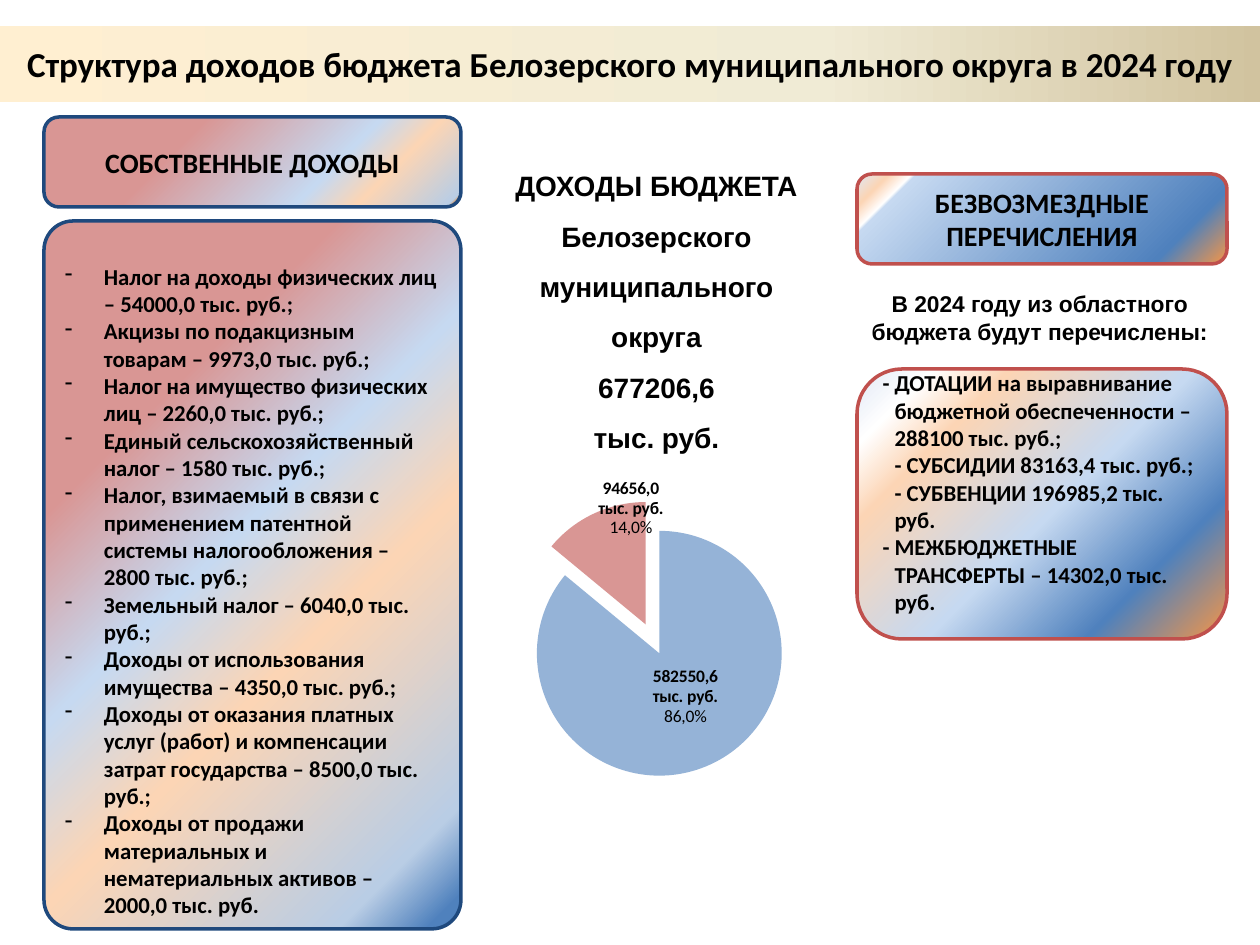
"""Builds a one-slide overview of a municipal district's 2024 budget revenue."""
from lxml.etree import SubElement
from pptx import Presentation
from pptx.chart.data import CategoryChartData
from pptx.dml.color import RGBColor
from pptx.enum.chart import XL_CHART_TYPE, XL_LABEL_POSITION
from pptx.enum.shapes import MSO_SHAPE
from pptx.enum.text import MSO_ANCHOR, PP_ALIGN
from pptx.oxml.ns import qn
from pptx.util import Pt

EMU_PER_PX = 914400 // 126
COLORS = {
    "text": "000000", "cream": "FFEFD1", "ivory": "F0EBD5", "sand": "D1C39F",
    "orange": "F79646", "blue": "4F81BD", "sky": "C6D9F1", "mist": "B9CDE5",
    "peach": "FCD5B5", "white": "FFFFFF", "ice": "E1E8F5", "rose": "D99694",
    "red": "C0504D", "navy": "1F497D", "steel": "95B3D7",
}

TITLE = "Структура доходов бюджета Белозерского муниципального округа в 2024 году"
OWN_HEADING = "СОБСТВЕННЫЕ ДОХОДЫ"
OWN_REVENUES = [
    "Налог на доходы физических лиц – 54000,0 тыс. руб.;",
    "Акцизы по подакцизным товарам – 9973,0 тыс. руб.;",
    "Налог на имущество физических лиц – 2260,0 тыс. руб.;",
    "Единый сельскохозяйственный налог – 1580 тыс. руб.;",
    "Налог, взимаемый в связи с применением патентной системы налогообложения – 2800 тыс. руб.;",
    "Земельный налог – 6040,0 тыс. руб.;",
    "Доходы от использования имущества – 4350,0 тыс. руб.;",
    "Доходы от оказания платных услуг (работ) и компенсации затрат государства – 8500,0 тыс. руб.;",
    "Доходы от продажи материальных и нематериальных активов – 2000,0 тыс. руб.",
]
TOTAL = ["ДОХОДЫ БЮДЖЕТА Белозерского муниципального округа", "677206,6", "тыс. руб."]
GRANTS_HEADING = "БЕЗВОЗМЕЗДНЫЕ ПЕРЕЧИСЛЕНИЯ"
GRANTS_INTRO = "В 2024 году из областного бюджета будут перечислены:"
GRANTS = [
    ("- ДОТАЦИИ на выравнивание бюджетной обеспеченности – 288100 тыс. руб.;", -12),
    ("- СУБСИДИИ 83163,4 тыс. руб.;", 0),
    ("- СУБВЕНЦИИ 196985,2 тыс. руб.", 0),
    ("- МЕЖБЮДЖЕТНЫЕ ТРАНСФЕРТЫ – 14302,0 тыс. руб.", -12),
]
SHARES = [
    {"value": 86, "color": "steel", "amount": "582550,6", "percent": "86,0%", "shift": (0, -0.03)},
    {"value": 14, "color": "rose", "amount": "94656,0", "percent": "14,0%", "shift": (0.02, -0.15)},
]

GRADIENTS = {
    "title": [(0, "cream"), (65, "ivory"), (100, "sand")],
    "own_heading": [(1, "blue"), (2, "orange"), (3, "mist"), (21, "peach"), (33, "sky"), (68, "rose")],
    "own_list": [(0, "blue"), (3, "blue"), (11, "mist"), (39, "peach"), (55, "sky"), (74, "rose")],
    "grants_heading": [(0, "orange"), (16, "blue"), (87, "sky"), (88, "white"), (93, "peach"), (100, "ice")],
    "grants_list": [(0, "orange"), (22, "blue"), (47, "sky"), (76, "peach"), (88, "white"), (100, "ice")],
}
OWN_X, OWN_W = 44, 417
GRANTS_X, GRANTS_W = 857, 370
HEADING_H = 90


def px(length):
    return int(length * EMU_PER_PX)


def rgb(name):
    return RGBColor.from_string(COLORS[name])


def style(font, size, face="Calibri", bold=True):
    font.size, font.name, font.bold = Pt(size), face, bold
    font.color.rgb = rgb("text")


def write(frame, lines, size, face="Calibri", align=PP_ALIGN.CENTER, spacing=None):
    frame.word_wrap = True
    for number, line in enumerate(lines):
        paragraph = frame.add_paragraph() if number else frame.paragraphs[0]
        paragraph.alignment = align
        if spacing:
            paragraph.line_spacing = spacing
        run = paragraph.add_run()
        run.text = line
        style(run.font, size, face)
    return frame


def indent(paragraph, margin, first, bullet=None):
    properties = paragraph._p.get_or_add_pPr()
    properties.set("marL", str(px(margin)))
    properties.set("indent", str(px(first)))
    if bullet:
        SubElement(properties, qn("a:buChar")).set("char", bullet)


def add_panel(slide, box, gradient, angle=135, border=None, kind=MSO_SHAPE.ROUNDED_RECTANGLE):
    panel = slide.shapes.add_shape(kind, *map(px, box))
    panel.shadow.inherit = False
    panel.fill.gradient()
    panel.fill.gradient_angle = angle
    stops = panel._element.spPr.find(qn("a:gradFill")).find(qn("a:gsLst"))
    for stop in list(stops):
        stops.remove(stop)
    for position, color in GRADIENTS[gradient]:
        stop = SubElement(stops, qn("a:gs"), pos=str(position * 1000))
        SubElement(stop, qn("a:srgbClr"), val=COLORS[color])
    if border:
        panel.line.color.rgb = rgb(border)
        panel.line.width = Pt(2)
    else:
        panel.line.fill.background()
    return panel


def add_caption(slide, box, lines, size, spacing=None):
    caption = slide.shapes.add_textbox(*map(px, box))
    write(caption.text_frame, lines, size, "Arial", spacing=spacing)


def place(parent_item, mode, **measures):
    layout = parent_item.makeelement(qn("c:layout"))
    manual = SubElement(layout, qn("c:manualLayout"))
    if mode:
        for tag, value in (("layoutTarget", mode), ("xMode", "edge"), ("yMode", "edge")):
            SubElement(manual, qn(f"c:{tag}")).set("val", value)
    for tag, value in measures.items():
        SubElement(manual, qn(f"c:{tag}")).set("val", str(value))
    return layout


def add_pie(slide, box):
    data = CategoryChartData()
    data.categories = [str(number + 1) for number in range(len(SHARES))]
    data.add_series("Series 1", [share["value"] for share in SHARES])
    chart = slide.shapes.add_chart(XL_CHART_TYPE.PIE, *map(px, box), data).chart
    chart.has_legend = chart.has_title = False
    style(chart.font, 10, bold=False)
    plot = chart.plots[0]
    plot.vary_by_categories = False
    area = plot._element.getparent()
    for old in area.findall(qn("c:layout")):
        area.remove(old)
    area.insert(0, place(area, "inner", x=0.2, y=0.09, w=0.7, h=0.68))
    series = plot.series[0]
    tx = series._element.find(qn("c:tx"))
    explosion = tx.makeelement(qn("c:explosion"), {"val": "13"})
    tx.addnext(explosion)
    for number, share in enumerate(SHARES):
        point = series.points[number]
        point.format.fill.solid()
        point.format.fill.fore_color.rgb = rgb(share["color"])
        label = point.data_label
        frame = write(label.text_frame, [share["amount"], "тыс. руб.", share["percent"]], 10)
        frame.paragraphs[-1].runs[0].font.bold = False
        label.position = XL_LABEL_POSITION.CENTER
        index = series._element.find(qn("c:dLbls")).findall(qn("c:dLbl"))[number].find(qn("c:idx"))
        shift_x, shift_y = share["shift"]
        index.addnext(place(index, None, x=shift_x, y=shift_y))


def main():
    presentation = Presentation()
    presentation.slide_width, presentation.slide_height = px(1260), px(945)
    slide = presentation.slides.add_slide(presentation.slide_layouts[6])

    title = add_panel(slide, (0, 26, 1260, 76), "title", angle=0, kind=MSO_SHAPE.RECTANGLE)
    write(title.text_frame, [TITLE], 20)

    add_pie(slide, (343, 464, 563, 407))

    grants = add_panel(slide, (GRANTS_X, 369, GRANTS_W, 270), "grants_list", border="red")
    frame = write(grants.text_frame, [text for text, _ in GRANTS], 13, align=PP_ALIGN.LEFT)
    frame.margin_top, frame.margin_bottom = 0, px(24)
    for paragraph, (_, first) in zip(frame.paragraphs, GRANTS):
        indent(paragraph, 12, first)

    heading = add_panel(slide, (GRANTS_X, 174, GRANTS_W, HEADING_H), "grants_heading", border="red")
    write(heading.text_frame, [GRANTS_HEADING], 16)
    add_caption(slide, (GRANTS_X, 284, 365, 68), [GRANTS_INTRO], 13)
    add_caption(slide, (479, 146, 355, 318), TOTAL, 16, spacing=1.5)

    heading = add_panel(slide, (OWN_X, 117, OWN_W, HEADING_H), "own_heading", border="navy")
    write(heading.text_frame, [OWN_HEADING], 16)

    own = add_panel(slide, (OWN_X, 221, OWN_W, 708), "own_list", border="navy")
    own.adjustments[0] = 0.07
    frame = write(own.text_frame, OWN_REVENUES, 13, align=PP_ALIGN.LEFT)
    frame.vertical_anchor = MSO_ANCHOR.TOP
    frame.margin_top, frame.margin_bottom = px(33), 0
    for paragraph in frame.paragraphs:
        indent(paragraph, 39, -39, "-")

    presentation.save("out.pptx")


if __name__ == "__main__":
    main()
